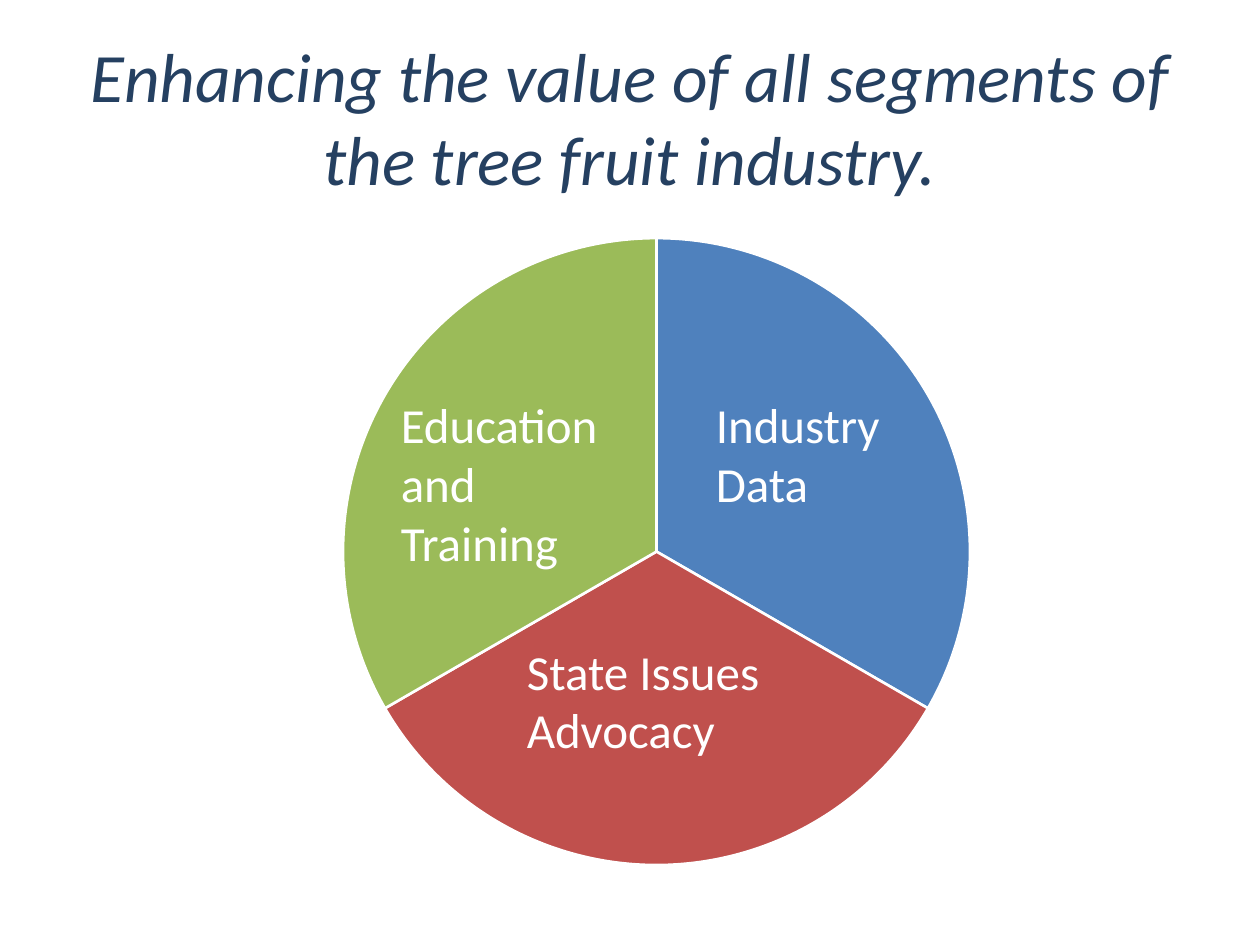
from pptx import Presentation
from pptx.chart.data import CategoryChartData
from pptx.dml.color import RGBColor
from pptx.enum.chart import XL_CHART_TYPE
from pptx.enum.text import MSO_ANCHOR, MSO_AUTO_SIZE, PP_ALIGN
from pptx.util import Cm, Pt

PIE = XL_CHART_TYPE.PIE
MIDDLE = MSO_ANCHOR.MIDDLE
NO_AUTOFIT = MSO_AUTO_SIZE.NONE
CENTER = PP_ALIGN.CENTER

NAVY = RGBColor(0x25, 0x40, 0x61)
BLUE = RGBColor(0x4F, 0x81, 0xBD)
RED = RGBColor(0xC0, 0x50, 0x4D)
GREEN = RGBColor(0x9B, 0xBB, 0x59)
PURPLE = RGBColor(0x80, 0x64, 0xA2)
WHITE = RGBColor(0xFF, 0xFF, 0xFF)
BLACK = RGBColor(0x00, 0x00, 0x00)


class SlideBuilder:
    """Hold the slide and its text style, and add each kind of element."""

    font_name = "Calibri"
    label_size = Pt(28)
    title_size = Pt(39.6)

    def __init__(self, slide):
        self.slide = slide

    def style(self, font, size, color):
        font.name = self.font_name
        font.size = size
        font.color.rgb = color

    def title(self, text, left, top, width, height):
        heading = self.slide.shapes.title
        heading.left, heading.top = Cm(left), Cm(top)
        heading.width, heading.height = Cm(width), Cm(height)
        frame = heading.text_frame
        frame.text = text
        frame.word_wrap = True
        frame.auto_size = NO_AUTOFIT
        frame.vertical_anchor = MIDDLE
        frame.paragraphs[0].alignment = CENTER
        font = frame.paragraphs[0].runs[0].font
        self.style(font, self.title_size, NAVY)
        font.italic = True

    def pie(self, values, colors, left, top, width, height):
        segments = CategoryChartData()
        segments.categories = [str(n) for n in range(1, len(values) + 1)]
        segments.add_series("Series 1", values)
        chart = self.slide.shapes.add_chart(
            PIE, Cm(left), Cm(top), Cm(width), Cm(height), segments
        ).chart
        chart.has_legend = False
        chart.has_title = False
        self.style(chart.font, Pt(10), BLACK)
        plot = chart.plots[0]
        plot.vary_by_categories = True
        for index, color in enumerate(colors):
            wedge = plot.series[0].points[index].format
            wedge.fill.solid()
            wedge.fill.fore_color.rgb = color
            wedge.line.color.rgb = WHITE
            wedge.line.width = Pt(1.5)

    def label(self, text, left, top, width, height):
        frame = self.slide.shapes.add_textbox(
            Cm(left), Cm(top), Cm(width), Cm(height)
        ).text_frame
        frame.word_wrap = True
        frame.text = text
        for paragraph in frame.paragraphs:
            for run in paragraph.runs:
                self.style(run.font, self.label_size, WHITE)


def main():
    presentation = Presentation()
    presentation.slide_width = Cm(25.4)
    presentation.slide_height = Cm(19.05)
    title_only = presentation.slide_layouts[5]
    builder = SlideBuilder(presentation.slides.add_slide(title_only))

    builder.title(
        "Enhancing the value of all segments of the tree fruit industry.",
        1.27, 0.76, 22.86, 3.18,
    )
    builder.pie(
        (33, 33, 33, None), (BLUE, RED, GREEN, PURPLE), 3.18, 4.45, 20.11, 13.34
    )
    builder.label("Industry Data", 14.18, 7.83, 4.66, 2.65)
    builder.label("Education and Training", 7.83, 7.83, 5.08, 3.85)
    builder.label("State Issues\nAdvocacy", 10.37, 12.8, 6.35, 2.65)

    presentation.save("out.pptx")


if __name__ == "__main__":
    main()
